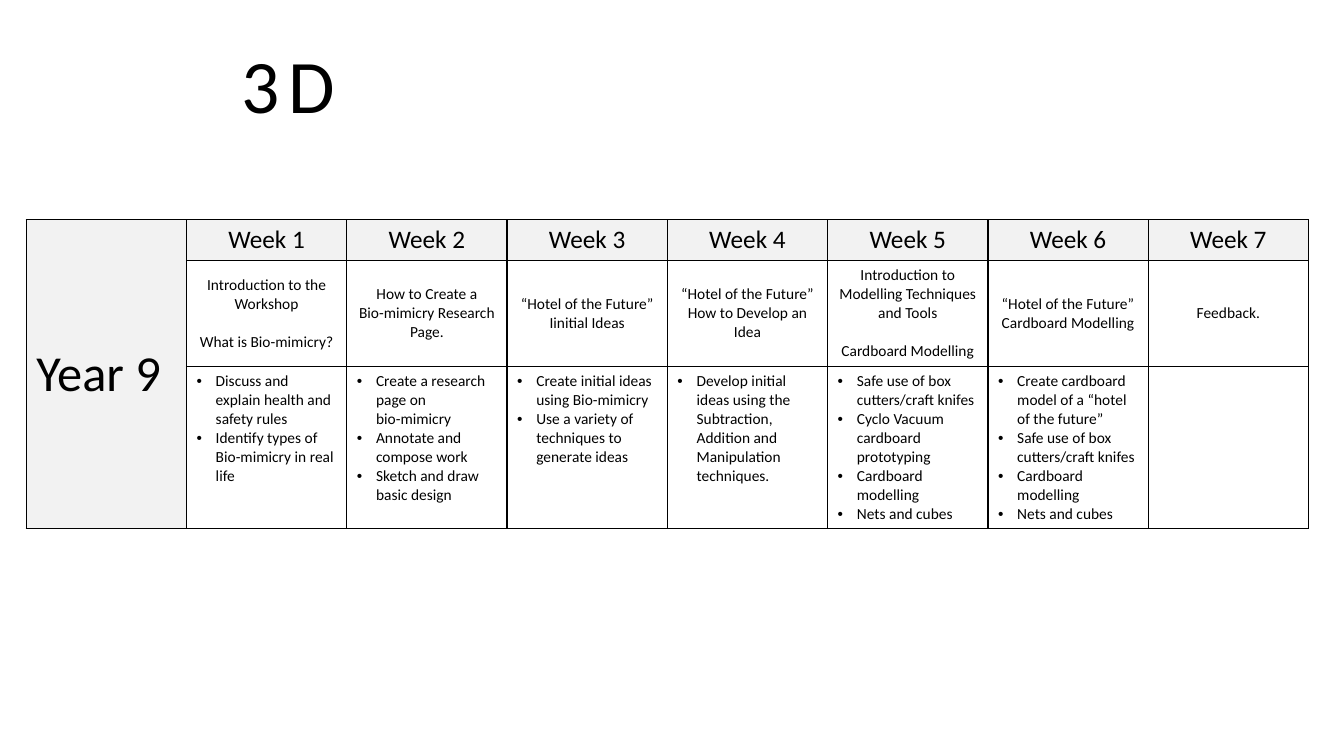
"""Build the Year 9 3D scheme-of-work slide."""
from dataclasses import dataclass
from lxml import etree
from pptx import Presentation
from pptx.dml.color import RGBColor
from pptx.enum import text
from pptx.oxml import ns
from pptx.util import Inches, Pt


@dataclass(frozen=True)
class Theme:
    font: str = "Calibri"
    ink: str = "000000"
    heading_fill: str = "F2F2F2"
    body_fill: str = "FFFFFF"
    title_size: int = 54
    year_size: int = 36
    week_size: int = 18
    body_size: int = 11
    topic_gap: float = 13.4


theme = Theme()
CENTER = text.PP_ALIGN.CENTER
LEFT = text.PP_ALIGN.LEFT
MIDDLE = text.MSO_ANCHOR.MIDDLE
TOP = text.MSO_ANCHOR.TOP


def write(frame, wording, size, align=LEFT):
    frame.text = wording
    for para in frame.paragraphs:
        para.alignment = align
        para.font.size = Pt(size)
        for span in para.runs:
            span.font.name = theme.font
            span.font.size = Pt(size)
            span.font.color.rgb = RGBColor.from_string(theme.ink)


def style_cell(cell, fill, anchor):
    cell.vertical_anchor = anchor
    cell.fill.solid()
    cell.fill.fore_color.rgb = RGBColor.from_string(fill)
    props = cell._tc.get_or_add_tcPr()
    for place, side in enumerate(("lnL", "lnR", "lnT", "lnB")):
        line = etree.Element(ns.qn(f"a:{side}"), w=str(Pt(1)))
        paint = etree.SubElement(line, ns.qn("a:solidFill"))
        etree.SubElement(paint, ns.qn("a:srgbClr"), val=theme.ink)
        props.insert(place, line)


weeks = [
    (["Introduction to the Workshop", "What is Bio-mimicry?"],
     ["Discuss and explain health and safety rules",
      "Identify types of Bio-mimicry in real life"]),
    (["How to Create a", "Bio-mimicry Research Page."],
     ["Create a research page on\vbio-mimicry",
      "Annotate and compose work",
      "Sketch and draw basic design"]),
    (["“Hotel of the Future” Iinitial Ideas"],
     ["Create initial ideas using Bio-mimicry",
      "Use a variety of techniques to generate ideas"]),
    (["“Hotel of the Future”", "How to Develop an Idea"],
     ["Develop initial ideas using the Subtraction, Addition and "
      "Manipulation techniques."]),
    (["Introduction to Modelling Techniques and Tools", "Cardboard Modelling"],
     ["Safe use of box cutters/craft knifes",
      "Cyclo Vacuum cardboard prototyping",
      "Cardboard modelling",
      "Nets and cubes"]),
    (["“Hotel of the Future”", "Cardboard Modelling"],
     ["Create cardboard model of a “hotel of the future”",
      "Safe use of box cutters/craft knifes",
      "Cardboard modelling",
      "Nets and cubes"]),
    (["Feedback."], []),
]
spaced_weeks = (1, 5)
row_heights = (0.4, 1.05, 1.61)
column_width = 1.59

deck = Presentation()
deck.slide_width = Inches(13.33)
deck.slide_height = Inches(7.5)
page = deck.slides.add_slide(deck.slide_layouts[6])

columns = len(weeks) + 1
table = page.shapes.add_table(
    len(row_heights), columns, Inches(0.26), Inches(2.18),
    Inches(column_width * columns), Inches(sum(row_heights))).table
table.first_row = False
table.horz_banding = False
for column in table.columns:
    column.width = Inches(column_width)
for row, height in zip(table.rows, row_heights):
    row.height = Inches(height)

year = table.cell(0, 0)
year.merge(table.cell(len(row_heights) - 1, 0))
write(year.text_frame, "Year 9", theme.year_size)
for row in range(len(row_heights)):
    style_cell(table.cell(row, 0), theme.heading_fill, MIDDLE)

for number, (topics, tasks) in enumerate(weeks, start=1):
    heading, topic, task = (table.cell(row, number) for row in range(3))
    write(heading.text_frame, f"Week {number}", theme.week_size, CENTER)
    write(topic.text_frame, "\n".join(topics), theme.body_size, CENTER)
    write(task.text_frame, "\n".join(tasks), theme.body_size)
    if number in spaced_weeks:
        topic.text_frame.paragraphs[-1].space_before = Pt(theme.topic_gap)
    if tasks:
        for para in task.text_frame.paragraphs:
            props = para._p.get_or_add_pPr()
            props.set("marL", str(Inches(0.19)))
            props.set("indent", str(Inches(-0.19)))
            etree.SubElement(props, ns.qn("a:buFont"), typeface="Arial")
            etree.SubElement(props, ns.qn("a:buChar"), char="•")
    style_cell(heading, theme.heading_fill, TOP)
    style_cell(topic, theme.body_fill, MIDDLE)
    style_cell(task, theme.body_fill, TOP)

title = page.shapes.add_textbox(Inches(2.3), Inches(0.33), Inches(6.75), Inches(1.01))
title.text_frame.word_wrap = True
title.text_frame.auto_size = text.MSO_AUTO_SIZE.SHAPE_TO_FIT_TEXT
write(title.text_frame, "3D", theme.title_size)
title.text_frame.paragraphs[0].runs[0]._r.get_or_add_rPr().set("spc", "600")

deck.save("out.pptx")
